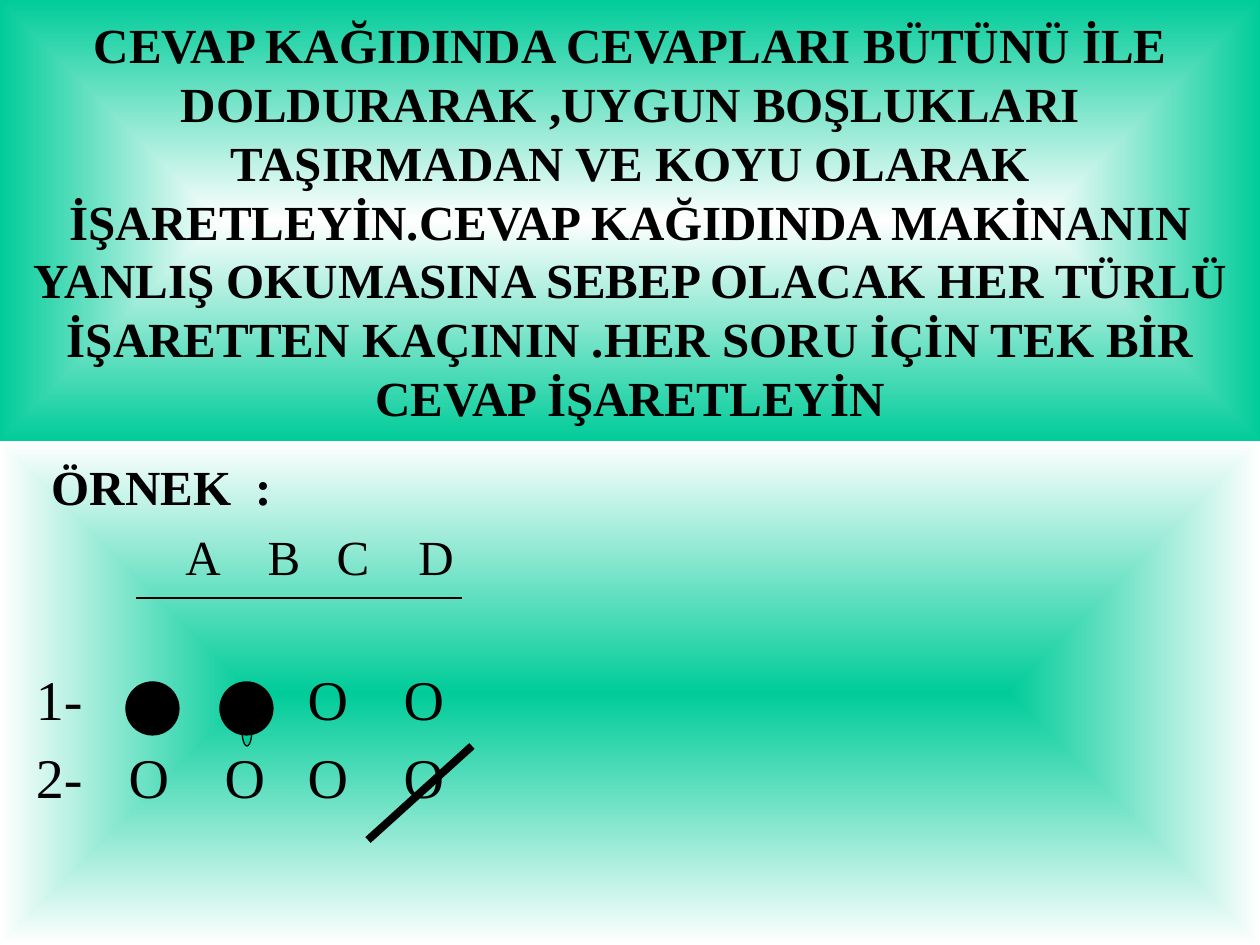
from dataclasses import dataclass

from lxml.etree import SubElement
from pptx import Presentation
from pptx.dml.color import RGBColor
from pptx.enum.shapes import MSO_CONNECTOR as Connector, MSO_SHAPE as Shape
from pptx.enum.text import MSO_ANCHOR as Anchor, MSO_AUTO_SIZE as AutoSize, PP_ALIGN as Align
from pptx.oxml.ns import qn
from pptx.util import Emu, Pt

WIDTH, HEIGHT, TITLE_HEIGHT = 1260, 945, 441
HEADING_TABS = [(52, "l")]
LETTER_TABS = [(x, "ctr") for x in (203, 284, 353, 436)]
ANSWER_TABS = [(36, "l")] + [(x, "ctr") for x in (149, 245, 328, 424)]

INSTRUCTIONS = (
    "CEVAP KAĞIDINDA CEVAPLARI BÜTÜNÜ İLE DOLDURARAK ,UYGUN BOŞLUKLARI "
    "TAŞIRMADAN VE KOYU OLARAK İŞARETLEYİN.CEVAP KAĞIDINDA MAKİNANIN "
    "YANLIŞ OKUMASINA SEBEP OLACAK HER TÜRLÜ İŞARETTEN KAÇININ .HER SORU "
    "İÇİN TEK BİR CEVAP İŞARETLEYİN"
)


@dataclass(frozen=True)
class Theme:
    font: str = "Times New Roman"
    ink: RGBColor = RGBColor(0, 0, 0)
    green: RGBColor = RGBColor(0x00, 0xCC, 0x99)
    white: RGBColor = RGBColor(255, 255, 255)
    heading_size: int = 28
    answer_size: int = 32
    thin: float = 0.75
    thick: float = 4.5


THEME = Theme()


def px(length):
    return Emu(round(length * 914400 / 126))


def place(shape, left, top, width, height):
    shape.left, shape.top = px(left), px(top)
    shape.width, shape.height = px(width), px(height)


def fill_from_centre(shape, centre, edge):
    """Fill with a gradient that spreads from the middle to the sides."""
    shape.fill.gradient()
    for stop, color in zip(shape.fill.gradient_stops, (centre, edge)):
        stop.color.rgb = color
    gradient = shape._element.spPr.find(qn("a:gradFill"))
    gradient.remove(gradient.find(qn("a:lin")))
    path = SubElement(gradient, qn("a:path"), {"path": "shape"})
    SubElement(path, qn("a:fillToRect"), dict.fromkeys("ltrb", "50000"))


def format_runs(paragraph, size, bold):
    for run in paragraph.runs:
        run.font.name = THEME.font
        run.font.size = Pt(size)
        run.font.bold = bold
        run.font.color.rgb = THEME.ink


def set_tabs(paragraph, tabs):
    tab_list = SubElement(paragraph._p.get_or_add_pPr(), qn("a:tabLst"))
    for position, alignment in tabs:
        SubElement(tab_list, qn("a:tab"), {"pos": str(px(position)), "algn": alignment})


def add_title(slide):
    title = slide.shapes.title
    place(title, 0, 0, WIDTH, TITLE_HEIGHT)
    fill_from_centre(title, THEME.white, THEME.green)
    frame = title.text_frame
    frame.text = INSTRUCTIONS
    frame.word_wrap = True
    frame.auto_size = AutoSize.NONE
    frame.vertical_anchor = Anchor.MIDDLE
    frame.paragraphs[0].alignment = Align.CENTER
    format_runs(frame.paragraphs[0], THEME.heading_size, True)


def add_example(slide):
    body = slide.shapes.add_textbox(0, px(TITLE_HEIGHT), px(WIDTH), px(HEIGHT - TITLE_HEIGHT))
    fill_from_centre(body, THEME.green, THEME.white)
    frame = body.text_frame
    frame.word_wrap = True
    frame.margin_left, frame.margin_top = 0, px(16)
    rows = [
        ("\tÖRNEK  :", HEADING_TABS, 0, THEME.heading_size, True),
        ("\tA\tB\tC\tD", LETTER_TABS, 11, THEME.heading_size, False),
        ("\t1-\tO\tO\tO\tO", ANSWER_TABS, 79, THEME.answer_size, False),
        ("\t2-\tO\tO\tO\tO", ANSWER_TABS, 11, THEME.answer_size, False),
    ]
    for index, (text, tabs, gap, size, bold) in enumerate(rows):
        paragraph = frame.add_paragraph() if index else frame.paragraphs[0]
        paragraph.text = text
        paragraph.space_before = px(gap)
        set_tabs(paragraph, tabs)
        format_runs(paragraph, size, bold)


def add_line(slide, start, end, width):
    line = slide.shapes.add_connector(Connector.STRAIGHT, *map(px, start + end))
    line.line.color.rgb = THEME.ink
    line.line.width = Pt(width)
    SubElement(line._element.spPr, qn("a:effectLst"))


def add_ellipse(slide, left, top, width, height, color):
    ellipse = slide.shapes.add_shape(Shape.OVAL, *map(px, (left, top, width, height)))
    ellipse.shadow.inherit = False
    ellipse.fill.solid()
    ellipse.fill.fore_color.rgb = color
    ellipse.line.color.rgb = THEME.ink
    ellipse.line.width = Pt(THEME.thin)


def main():
    presentation = Presentation()
    presentation.slide_width, presentation.slide_height = px(WIDTH), px(HEIGHT)
    slide = presentation.slides.add_slide(presentation.slide_layouts[5])
    add_title(slide)
    add_example(slide)
    add_line(slide, (136, 598), (462, 598), THEME.thin)
    add_line(slide, (368, 840), (472, 746), THEME.thick)
    add_ellipse(slide, 126, 682, 53, 53, THEME.ink)
    add_ellipse(slide, 242, 714, 10, 32, THEME.green)
    add_ellipse(slide, 220, 682, 53, 53, THEME.ink)
    presentation.save("out.pptx")


if __name__ == "__main__":
    main()
